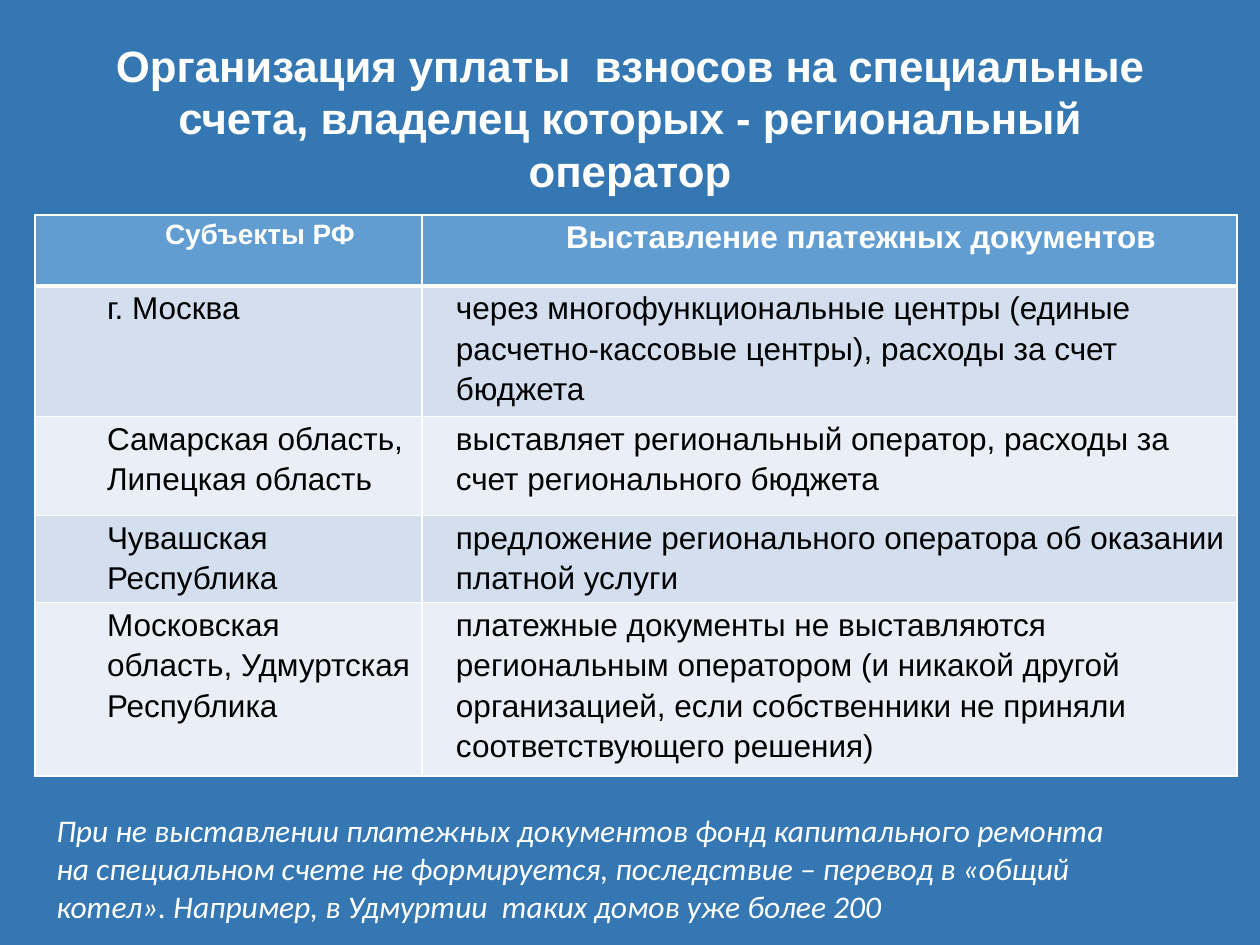
from dataclasses import dataclass

from lxml.etree import SubElement
from pptx import Presentation
from pptx.dml.color import RGBColor as RGB
from pptx.enum.text import MSO_ANCHOR as ANCHOR, PP_ALIGN as ALIGN
from pptx.oxml.ns import qn
from pptx.util import Pt

EMU_PER_PX = 914400 / 126


@dataclass(frozen=True)
class Theme:
    background: str = "3477B2"
    header: str = "629DD1"
    bands: tuple = ("D3DFEE", "EAEFF7")
    light: str = "FFFFFF"
    dark: str = "000000"
    font: str = "Arial"
    note_font: str = "Calibri"
    title_size: int = 25
    small_size: int = 16
    body_size: int = 18


THEME = Theme()

TITLE = ("Организация уплаты  взносов на специальные счета, "
         "владелец которых - региональный оператор")
HEADINGS = ("Субъекты РФ", "Выставление платежных документов")
REGIONS = [
    ("г. Москва",
     "через многофункциональные центры (единые расчетно-кассовые центры), "
     "расходы за счет бюджета"),
    ("Самарская область, Липецкая область",
     "выставляет региональный оператор, расходы за счет регионального бюджета"),
    ("Чувашская Республика",
     "предложение регионального оператора об оказании платной услуги"),
    ("Московская область, Удмуртская Республика",
     "платежные документы не выставляются региональным оператором (и никакой "
     "другой организацией, если собственники не приняли соответствующего решения)"),
]
NOTE = ("При не выставлении платежных документов фонд капитального ремонта на "
        "специальном счете не формируется, последствие – перевод в «общий котел». "
        "Например, в Удмуртии  таких домов уже более 200")


def px(length):
    return round(length * EMU_PER_PX)


def set_all(target, **values):
    for name, value in values.items():
        setattr(target, name, value)


def write(frame, text, color, size, font=THEME.font, align=ALIGN.LEFT, **style):
    """Put one formatted paragraph into a text frame and return it."""
    paragraph = frame.paragraphs[0]
    paragraph.alignment = align
    run = paragraph.add_run()
    run.text = text
    set_all(run.font, name=font, size=Pt(size), **style)
    run.font.color.rgb = RGB.from_string(color)
    return paragraph


def add_text(slide, box, text, anchor, **style):
    frame = slide.shapes.add_textbox(*map(px, box)).text_frame
    set_all(frame, word_wrap=True, vertical_anchor=anchor)
    write(frame, text, THEME.light, **style)


def add_borders(cell, bottom):
    properties = cell._tc.get_or_add_tcPr()
    widths = {"a:lnL": 1, "a:lnR": 1, "a:lnT": 1, "a:lnB": bottom}
    for position, (tag, width) in enumerate(widths.items()):
        line = SubElement(properties, qn(tag), w=str(Pt(width)))
        fill = SubElement(line, qn("a:solidFill"))
        SubElement(fill, qn("a:srgbClr"), val=THEME.light)
        properties.insert(position, line)


def fill_cell(cell, text, fill, indent, bottom=1, **style):
    set_all(cell, margin_left=px(9), margin_right=px(9),
            margin_top=0, margin_bottom=0)
    cell.fill.solid()
    cell.fill.fore_color.rgb = RGB.from_string(fill)
    add_borders(cell, bottom)
    paragraph = write(cell.text_frame, text, **style)
    paragraph.line_spacing = 1.15
    paragraph._p.get_or_add_pPr().set("marL", str(px(indent)))


def add_region_table(slide, box, first_width, row_heights):
    left, top, width, height = box
    table = slide.shapes.add_table(
        len(row_heights), len(HEADINGS), *map(px, box)).table
    for column, column_width in zip(table.columns, (first_width, width - first_width)):
        column.width = px(column_width)
    for row, row_height in zip(table.rows, row_heights):
        row.height = px(row_height)

    heading_sizes = (THEME.small_size, THEME.body_size)
    for column, (heading, size) in enumerate(zip(HEADINGS, heading_sizes)):
        fill_cell(table.cell(0, column), heading, THEME.header, indent=63, bottom=3,
                  color=THEME.light, size=size, align=ALIGN.CENTER, bold=True)
    for row, texts in enumerate(REGIONS, start=1):
        band = THEME.bands[(row - 1) % 2]
        for column, (text, indent) in enumerate(zip(texts, (63, 25))):
            fill_cell(table.cell(row, column), text, band, indent,
                      color=THEME.dark, size=THEME.body_size, bold=False)


def build_payment_slide(deck):
    slide = deck.slides.add_slide(deck.slide_layouts[6])
    background = slide.background.fill
    background.solid()
    background.fore_color.rgb = RGB.from_string(THEME.background)

    add_text(slide, (63, 38, 1134, 158), TITLE, ANCHOR.MIDDLE,
             size=THEME.title_size, align=ALIGN.CENTER, bold=True)
    row_heights = (71, 122, 99, 81, 163)
    add_region_table(slide, (35, 215, 1202, sum(row_heights)), 387, row_heights)
    add_text(slide, (44, 805, 1081, 127), NOTE, ANCHOR.TOP,
             size=THEME.body_size, font=THEME.note_font, italic=True)


def main():
    deck = Presentation()
    set_all(deck, slide_width=px(1260), slide_height=px(945))
    build_payment_slide(deck)
    deck.save("out.pptx")


if __name__ == "__main__":
    main()
